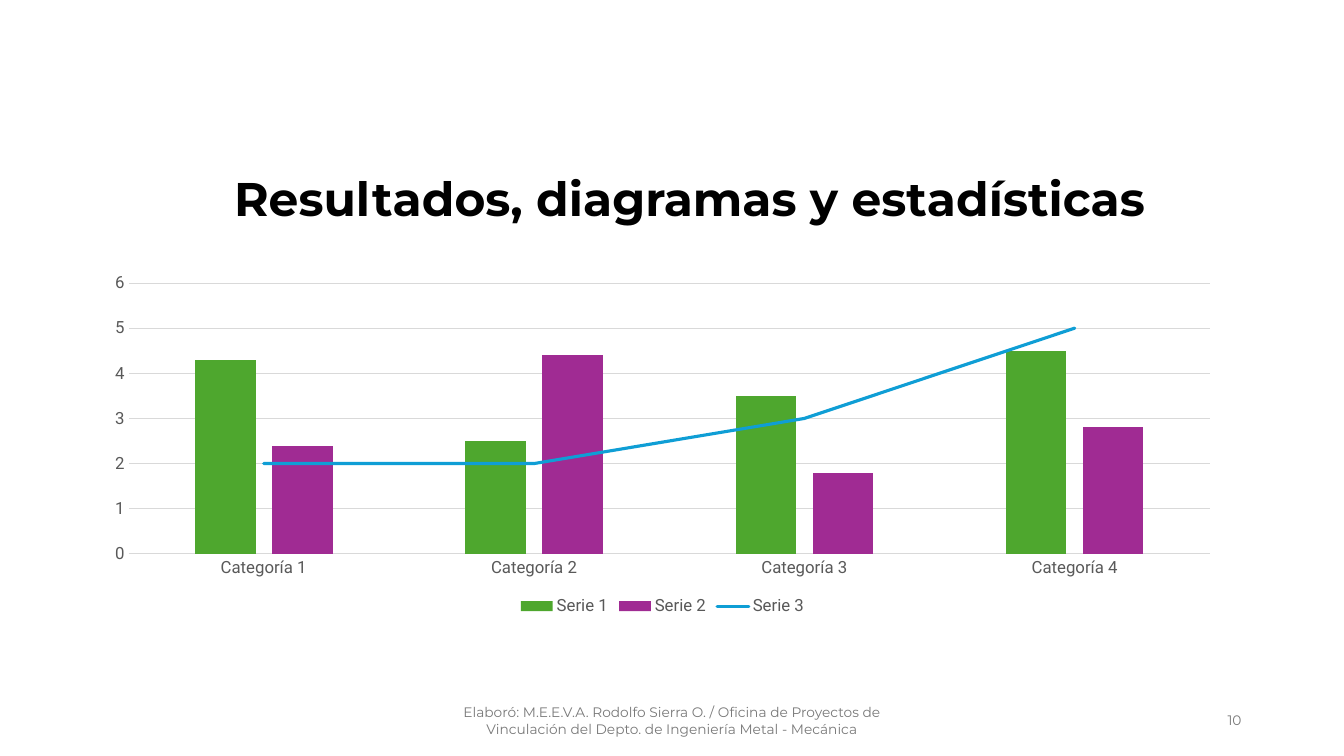
from lxml.etree import SubElement
from pptx import Presentation
from pptx.chart.data import CategoryChartData
from pptx.dml.color import RGBColor
from pptx.enum.chart import XL_CHART_TYPE, XL_LEGEND_POSITION, XL_TICK_MARK
from pptx.enum.text import MSO_ANCHOR, MSO_AUTO_SIZE, PP_ALIGN
from pptx.oxml import parse_xml
from pptx.oxml.ns import nsdecls, qn
from pptx.util import Pt

CATEGORIES = ["Categoría 1", "Categoría 2", "Categoría 3", "Categoría 4"]
SERIES = [
    ("Serie 1", (4.3, 2.5, 3.5, 4.5), "4EA72E"),
    ("Serie 2", (2.4, 4.4, 1.8, 2.8), "A02B93"),
    ("Serie 3", (2, 2, 3, 5), "0F9ED5"),
]


def color(value):
    return RGBColor.from_string(value)


def format_font(font, name, size, fill, bold=False):
    font.name = name
    font.size = Pt(size)
    font.bold = bold
    font.color.rgb = color(fill)


def write_text(shape, text, size, fill, bold=False, align=PP_ALIGN.LEFT,
               line_spacing=1.0, space_after=0):
    frame = shape.text_frame
    frame.word_wrap = True
    frame.auto_size = MSO_AUTO_SIZE.NONE
    frame.vertical_anchor = MSO_ANCHOR.MIDDLE
    paragraph = frame.paragraphs[0]
    paragraph.alignment = align
    paragraph.line_spacing = line_spacing
    paragraph.space_after = Pt(space_after)
    run = paragraph.add_run()
    run.text = text
    format_font(run.font, "Montserrat", size, fill, bold)


def add_title(slide, left, top, width, height):
    title = slide.shapes.title
    title.left, title.top = Pt(left), Pt(top)
    title.width, title.height = Pt(width), Pt(height)
    write_text(title, "Resultados, diagramas y estadísticas", size=33.7,
               fill="000000", bold=True, line_spacing=0.9)


def add_footer(slide, left, top, width, height):
    credit_width, number_width = 324, 216
    credit = slide.shapes.add_textbox(Pt(left), Pt(top), Pt(credit_width), Pt(height))
    write_text(credit, "Elaboró: M.E.E.V.A. Rodolfo Sierra O. / Oficina de Proyectos de "
               "Vinculación del Depto. de Ingeniería Metal - Mecánica",
               size=9.8, fill="797979", align=PP_ALIGN.CENTER)
    number = slide.shapes.add_textbox(Pt(left + width - number_width), Pt(top),
                                      Pt(number_width), Pt(height))
    write_text(number, "10", size=9.8, fill="797979", align=PP_ALIGN.RIGHT, space_after=6)


def move_last_series_to_line(chart):
    bar_chart = chart.plots[0].series[0]._element.getparent()
    series = bar_chart.findall(qn("c:ser"))[-1]
    inverted = series.find(qn("c:invertIfNegative"))
    if inverted is not None:
        series.remove(inverted)
    line_chart = parse_xml(
        f'<c:lineChart {nsdecls("c")}><c:grouping val="standard"/>'
        '<c:varyColors val="0"/></c:lineChart>')
    line_chart.append(series)
    SubElement(line_chart, qn("c:marker")).set("val", "1")
    for axis in bar_chart.findall(qn("c:axId")):
        SubElement(line_chart, qn("c:axId")).set("val", axis.get("val"))
    bar_chart.addnext(line_chart)
    marker = parse_xml(f'<c:marker {nsdecls("c")}><c:symbol val="none"/></c:marker>')
    series.find(qn("c:tx")).addnext(marker)


def format_axis(axis):
    axis.major_tick_mark = axis.minor_tick_mark = XL_TICK_MARK.NONE
    format_font(axis.tick_labels.font, "Roboto", 12, "595959")


def format_line(line, fill, width):
    line.color.rgb = color(fill)
    line.width = Pt(width)


def add_results_chart(slide, left, top, width, height):
    data = CategoryChartData()
    data.categories = CATEGORIES
    for name, values, fill in SERIES:
        data.add_series(name, values)
    chart = slide.shapes.add_chart(XL_CHART_TYPE.COLUMN_CLUSTERED, Pt(left), Pt(top),
                                   Pt(width), Pt(height), data).chart
    format_font(chart.font, "Roboto", 10, "000000")
    chart.has_title = False
    chart.has_legend = True
    chart.legend.position = XL_LEGEND_POSITION.BOTTOM
    chart.legend.include_in_layout = False
    format_font(chart.legend.font, "Roboto", 12, "595959")

    format_axis(chart.category_axis)
    format_line(chart.category_axis.format.line, "D9D9D9", 0.75)
    value_axis = chart.value_axis
    format_axis(value_axis)
    value_axis.format.line.fill.background()
    value_axis.minimum_scale, value_axis.maximum_scale = 0, 6
    value_axis.major_unit = 1
    format_line(value_axis.major_gridlines.format.line, "D9D9D9", 0.75)

    columns = chart.plots[0]
    columns.vary_by_categories = False
    columns.gap_width, columns.overlap = 219, -27
    move_last_series_to_line(chart)
    for series, (name, values, fill) in zip(columns.series, SERIES):
        series.format.fill.solid()
        series.format.fill.fore_color.rgb = color(fill)
    trend = chart.plots[1].series[0]
    trend.smooth = False
    format_line(trend.format.line, SERIES[-1][2], 2.25)
    trend.format.line._ln.set("cap", "rnd")


def main():
    presentation = Presentation()
    presentation.slide_width, presentation.slide_height = Pt(960), Pt(540)
    slide = presentation.slides.add_slide(presentation.slide_layouts[5])
    add_title(slide, 160, 114, 720.5, 59)
    add_footer(slide, 318, 500.25, 576, 28.75)
    add_results_chart(slide, 66, 190, 814.5, 253)
    presentation.save("out.pptx")


if __name__ == "__main__":
    main()
